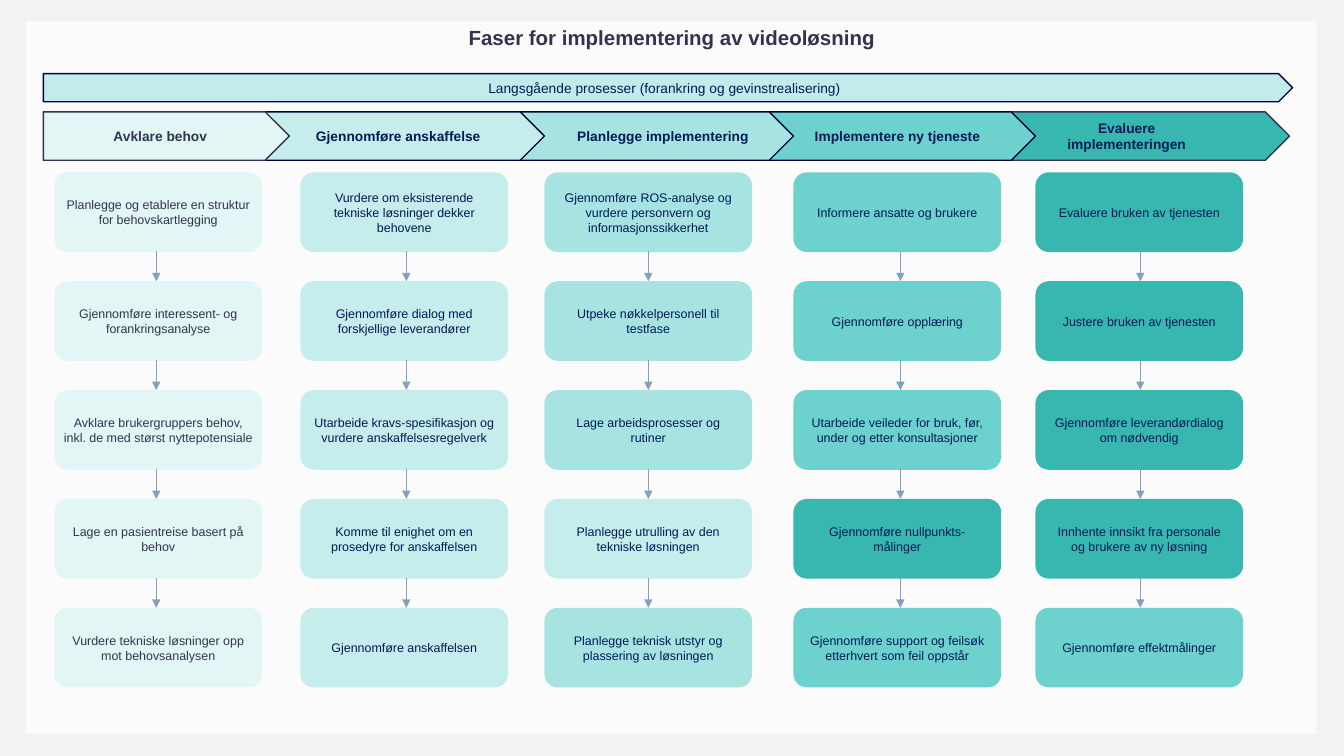
from dataclasses import dataclass

from lxml import etree
from pptx import Presentation
from pptx.dml.color import RGBColor
from pptx.enum.shapes import MSO_CONNECTOR, MSO_SHAPE
from pptx.enum.text import MSO_ANCHOR, MSO_AUTO_SIZE, PP_ALIGN
from pptx.oxml.ns import qn
from pptx.shapes.autoshape import Shape
from pptx.slide import Slide
from pptx.util import Inches, Pt

PENTAGON = MSO_SHAPE.PENTAGON
ROUNDED = MSO_SHAPE.ROUNDED_RECTANGLE
RECTANGLE = MSO_SHAPE.RECTANGLE
STRAIGHT = MSO_CONNECTOR.STRAIGHT
MIDDLE = MSO_ANCHOR.MIDDLE
CENTER = PP_ALIGN.CENTER
NO_AUTOFIT = MSO_AUTO_SIZE.NONE

FONT = "Arial"
COLORS = {
    "backdrop": "F1F2F2",
    "panel": "FBFBFB",
    "slate": "33334F",
    "navy": "001A58",
    "outline": "040439",
    "arrow": "85A0BE",
    "banner": "C2ECEB",
    "mist": "E2F6F5",
    "pale": "C5EDEB",
    "light": "A7E4E1",
    "medium": "6DD2CD",
    "deep": "38B7B1",
}

BOX_WIDTH, BOX_HEIGHT = 2.06, 0.79
FIRST_ROW, ROW_PITCH = 1.71, 1.08
ARROW_LENGTH = 0.3
PHASE_TOP, PHASE_HEIGHT = 1.11, 0.48
SIDE_INSET, TIGHT_INSET = 0.1, 0.03


@dataclass(frozen=True)
class Frame:
    left: float
    top: float
    width: float
    height: float


@dataclass(frozen=True)
class TextStyle:
    size: float
    color: str = "navy"
    bold: bool = False
    left_inset: float = SIDE_INSET
    right_inset: float = SIDE_INSET


@dataclass(frozen=True)
class Step:
    text: str
    shade: str = ""


@dataclass(frozen=True)
class Phase:
    heading: tuple[str, ...]
    shade: str
    left: float
    width: float
    column: float
    arrow: float
    steps: tuple[Step, ...]
    ink: str = "navy"
    outline: str = "outline"
    inset: float = SIDE_INSET
    indent: float = 0


PHASES = (
    Phase(("Avklare behov",), "mist", 0.43, 2.44, 0.54, 1.55, (
        Step("Planlegge og etablere en struktur for behovskartlegging"),
        Step("Gjennomføre interessent- og forankringsanalyse"),
        Step("Avklare brukergruppers behov, inkl. de med størst nyttepotensiale"),
        Step("Lage en pasientreise basert på behov"),
        Step("Vurdere tekniske løsninger opp mot behovsanalysen"),
    ), ink="slate", outline="slate", inset=TIGHT_INSET),
    Phase(("Gjennomføre anskaffelse",), "pale", 2.62, 2.78, 2.98, 4.03, (
        Step("Vurdere om eksisterende tekniske løsninger dekker behovene"),
        Step("Gjennomføre dialog med forskjellige leverandører"),
        Step("Utarbeide kravs-spesifikasjon og vurdere anskaffelsesregelverk"),
        Step("Komme til enighet om en prosedyre for anskaffelsen"),
        Step("Gjennomføre anskaffelsen"),
    )),
    Phase(("Planlegge implementering",), "light", 5.06, 2.81, 5.4, 6.43, (
        Step("Gjennomføre ROS-analyse og vurdere personvern og informasjonssikkerhet"),
        Step("Utpeke nøkkelpersonell til testfase"),
        Step("Lage arbeidsprosesser og rutiner"),
        Step("Planlegge utrulling av den tekniske løsningen", "pale"),
        Step("Planlegge teknisk utstyr og plassering av løsningen"),
    ), indent=0.34),
    Phase(("Implementere ny tjeneste",), "medium", 7.49, 2.78, 7.87, 8.93, (
        Step("Informere ansatte og brukere"),
        Step("Gjennomføre opplæring"),
        Step("Utarbeide veileder for bruk, før, under og etter konsultasjoner"),
        Step("Gjennomføre nullpunkts-målinger", "deep"),
        Step("Gjennomføre support og feilsøk etterhvert som feil oppstår"),
    ), indent=0.16),
    Phase(("Evaluere", "implementeringen"), "deep", 9.68, 3.11, 10.27, 11.31, (
        Step("Evaluere bruken av tjenesten"),
        Step("Justere bruken av tjenesten"),
        Step("Gjennomføre leverandørdialog om nødvendig"),
        Step("Innhente innsikt fra personale og brukere av ny løsning"),
        Step("Gjennomføre effektmålinger", "medium"),
    ), outline="slate"),
)


def rgb(name: str) -> RGBColor:
    return RGBColor.from_string(COLORS[name])


def write_text(shape: Shape, lines: tuple[str, ...], style: TextStyle) -> None:
    frame = shape.text_frame
    frame.word_wrap = True
    frame.auto_size = NO_AUTOFIT
    frame.vertical_anchor = MIDDLE
    frame.margin_left = Inches(style.left_inset)
    frame.margin_right = Inches(style.right_inset)
    frame.margin_top = frame.margin_bottom = Inches(TIGHT_INSET)
    for index, line in enumerate(lines):
        paragraph = frame.add_paragraph() if index else frame.paragraphs[0]
        paragraph.alignment = CENTER
        run = paragraph.add_run()
        run.text = line
        run.font.name = FONT
        run.font.size = Pt(style.size)
        run.font.bold = style.bold
        run.font.color.rgb = rgb(style.color)


def add_block(slide: Slide, kind: MSO_SHAPE, frame: Frame, fill: str, outline: str = "") -> Shape:
    shape = slide.shapes.add_shape(
        kind, Inches(frame.left), Inches(frame.top), Inches(frame.width), Inches(frame.height))
    shape.shadow.inherit = False
    shape.fill.solid()
    shape.fill.fore_color.rgb = rgb(fill)
    if outline:
        shape.line.color.rgb = rgb(outline)
        shape.line.width = Pt(1)
    else:
        shape.line.fill.background()
    return shape


def add_arrow(slide: Slide, center: float, tip: float) -> None:
    connector = slide.shapes.add_connector(
        STRAIGHT, Inches(center), Inches(tip - ARROW_LENGTH), Inches(center), Inches(tip))
    connector.line.color.rgb = rgb("arrow")
    connector.line.width = Pt(0.5)
    etree.SubElement(connector.line._get_or_add_ln(), qn("a:tailEnd"), type="triangle")
    etree.SubElement(connector._element.spPr, qn("a:effectLst"))


def add_title(slide: Slide) -> None:
    title = slide.shapes.title
    title.left, title.top = Inches(3.94), Inches(0.2)
    title.width, title.height = Inches(5.45), Inches(0.35)
    write_text(title, ("Faser for implementering av videoløsning",), TextStyle(14.6, "slate", True))


def add_heading(slide: Slide, phase: Phase) -> None:
    frame = Frame(phase.left, PHASE_TOP, phase.width, PHASE_HEIGHT)
    shape = add_block(slide, PENTAGON, frame, phase.shade, phase.outline)
    style = TextStyle(9.8, phase.ink, True, phase.inset + phase.indent, phase.inset)
    write_text(shape, phase.heading, style)


def add_steps(slide: Slide, phase: Phase) -> None:
    style = TextStyle(8.9, phase.ink, False, phase.inset, phase.inset)
    tops = [FIRST_ROW + ROW_PITCH * row for row in range(len(phase.steps))]
    for top, step in zip(tops, phase.steps):
        frame = Frame(phase.column, top, BOX_WIDTH, BOX_HEIGHT)
        shape = add_block(slide, ROUNDED, frame, step.shade or phase.shade)
        write_text(shape, (step.text,), style)
    for top in tops[1:]:
        add_arrow(slide, phase.arrow, top)


def main() -> None:
    presentation = Presentation()
    presentation.slide_width, presentation.slide_height = Inches(13.33), Inches(7.5)
    slide = presentation.slides.add_slide(presentation.slide_layouts.get_by_name("Title Only"))
    slide.background.fill.solid()
    slide.background.fill.fore_color.rgb = rgb("backdrop")
    panel = add_block(slide, RECTANGLE, Frame(0.26, 0.21, 12.8, 7.07), "panel")
    slide.shapes._spTree.insert(2, panel._element)
    add_title(slide)
    banner = add_block(slide, PENTAGON, Frame(0.43, 0.73, 12.39, 0.28), "banner", "outline")
    write_text(banner, ("Langsgående prosesser (forankring og gevinstrealisering)",), TextStyle(9.8))
    for phase in reversed(PHASES):
        add_heading(slide, phase)
    for phase in PHASES:
        add_steps(slide, phase)
    presentation.save("out.pptx")


if __name__ == "__main__":
    main()
